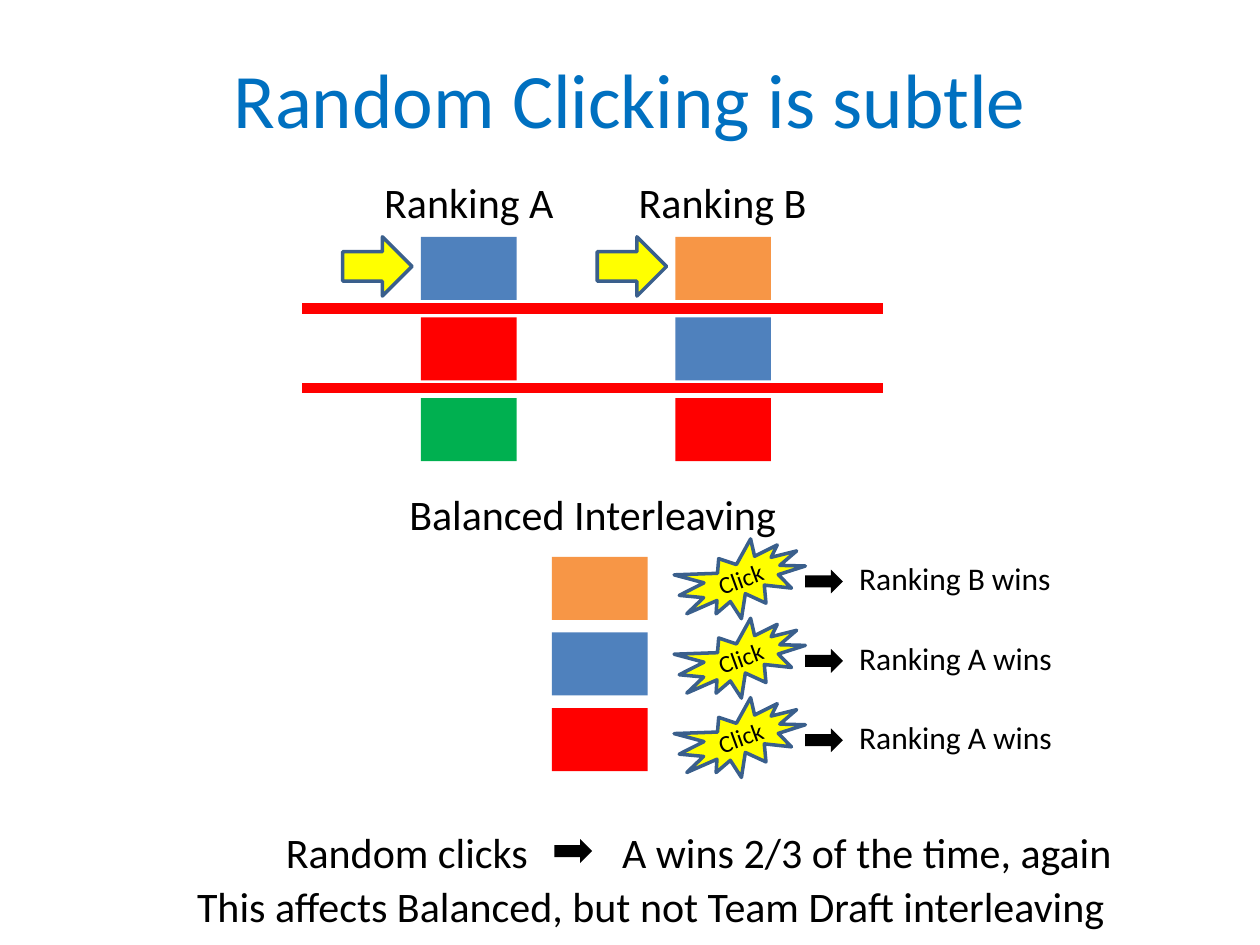
from lxml.etree import SubElement
from pptx import Presentation
from pptx.dml.color import RGBColor
from pptx.enum.shapes import MSO_CONNECTOR as Connector, MSO_SHAPE as Shape
from pptx.enum.text import MSO_ANCHOR as Anchor, PP_ALIGN as Align
from pptx.oxml.ns import qn
from pptx.util import Inches, Pt

TITLE_BLUE = RGBColor(0x00, 0x70, 0xC0)
BLUE = RGBColor(0x4F, 0x81, 0xBD)
OUTLINE = RGBColor(0x3A, 0x5F, 0x8C)
ORANGE = RGBColor(0xF7, 0x96, 0x46)
RED = RGBColor(0xFF, 0x00, 0x00)
GREEN = RGBColor(0x00, 0xB0, 0x50)
YELLOW = RGBColor(0xFF, 0xFF, 0x00)
BLACK = RGBColor(0x00, 0x00, 0x00)


def write_text(shape, text, size=24, color=BLACK, align=Align.LEFT,
               anchor=Anchor.TOP, wrap=False, tab=None):
    frame = shape.text_frame
    frame.word_wrap = wrap
    frame.vertical_anchor = anchor
    paragraph = frame.paragraphs[0]
    paragraph.alignment = align
    run = paragraph.add_run()
    run.text = text
    run.font.name = "Calibri"
    run.font.size = Pt(size)
    run.font.color.rgb = color
    if tab is not None:
        tabs = SubElement(paragraph._p.get_or_add_pPr(), qn("a:tabLst"))
        SubElement(tabs, qn("a:tab"), pos=str(Inches(tab)), algn="l")


class SlideBuilder:
    """Draws styled elements on one slide, with lengths in inches."""

    def __init__(self, slide):
        self.shapes = slide.shapes

    def label(self, text, left, top, width, height=0.5, **text_format):
        box = self.shapes.add_textbox(
            Inches(left), Inches(top), Inches(width), Inches(height))
        write_text(box, text, **text_format)

    def shape(self, kind, left, top, width, height, fill, outline=None):
        shape = self.shapes.add_shape(
            kind, Inches(left), Inches(top), Inches(width), Inches(height))
        shape.shadow.inherit = False
        shape.fill.solid()
        shape.fill.fore_color.rgb = fill
        if outline is None:
            shape.line.fill.background()
        else:
            shape.line.color.rgb = outline
            shape.line.width = Pt(2)
        return shape

    def column(self, left, top, step, colors):
        for row, color in enumerate(colors):
            self.shape(Shape.RECTANGLE, left, top + row * step, 0.76, 0.5, color)

    def pointer(self, left, top):
        self.shape(Shape.RIGHT_ARROW, left, top, 0.55, 0.47, YELLOW, OUTLINE)

    def implies(self, left, top):
        self.shape(Shape.RIGHT_ARROW, left, top, 0.3, 0.19, BLACK)

    def click(self, left, top):
        burst = self.shape(
            Shape.EXPLOSION1, left, top, 1.02, 0.57, YELLOW, OUTLINE)
        burst.rotation = 340
        write_text(burst, "Click", size=14, align=Align.CENTER,
                   anchor=Anchor.MIDDLE)

    def divider(self, top):
        line = self.shapes.add_connector(
            Connector.STRAIGHT, Inches(2.4), Inches(top), Inches(7.01), Inches(top))
        line.line.color.rgb = RED
        line.line.width = Pt(6)
        SubElement(line._element.spPr, qn("a:effectLst"))


def main():
    presentation = Presentation()
    presentation.slide_width = Inches(10)
    presentation.slide_height = Inches(7.5)
    builder = SlideBuilder(
        presentation.slides.add_slide(presentation.slide_layouts[6]))

    builder.label("Random Clicking is subtle", 0.5, 0.3, 9, 0.95, size=44,
                  color=TITLE_BLUE, align=Align.CENTER, anchor=Anchor.MIDDLE,
                  wrap=True)

    rankings = [("Ranking A", 3.34, (BLUE, RED, GREEN)),
                ("Ranking B", 5.36, (ORANGE, BLUE, RED))]
    for name, left, colors in rankings:
        builder.label(name, left - 0.39, 1.35, 1.55)
        builder.pointer(left - 0.62, 1.88)
        builder.column(left, 1.88, 0.64, colors)

    builder.label("Balanced Interleaving", 3.15, 3.83, 3.14)
    builder.column(4.38, 4.42, 0.6, (ORANGE, BLUE, RED))
    for row, winner in enumerate("BAA"):
        top = 4.32 + row * 0.63
        builder.click(5.38, top)
        builder.implies(6.39, top + 0.2)
        builder.label(f"Ranking {winner} wins", 6.72, top + 0.07, 1.75, 0.4, size=18)

    for top in (2.45, 3.08):
        builder.divider(top)

    builder.label("Random clicks\tA wins 2/3 of the time, again",
                  2.17, 6.51, 7, wrap=True, tab=2.67)
    builder.implies(4.4, 6.66)
    builder.label("This affects Balanced, but not Team Draft interleaving",
                  1.42, 6.94, 7.49, align=Align.CENTER)
    presentation.save("out.pptx")


if __name__ == "__main__":
    main()
